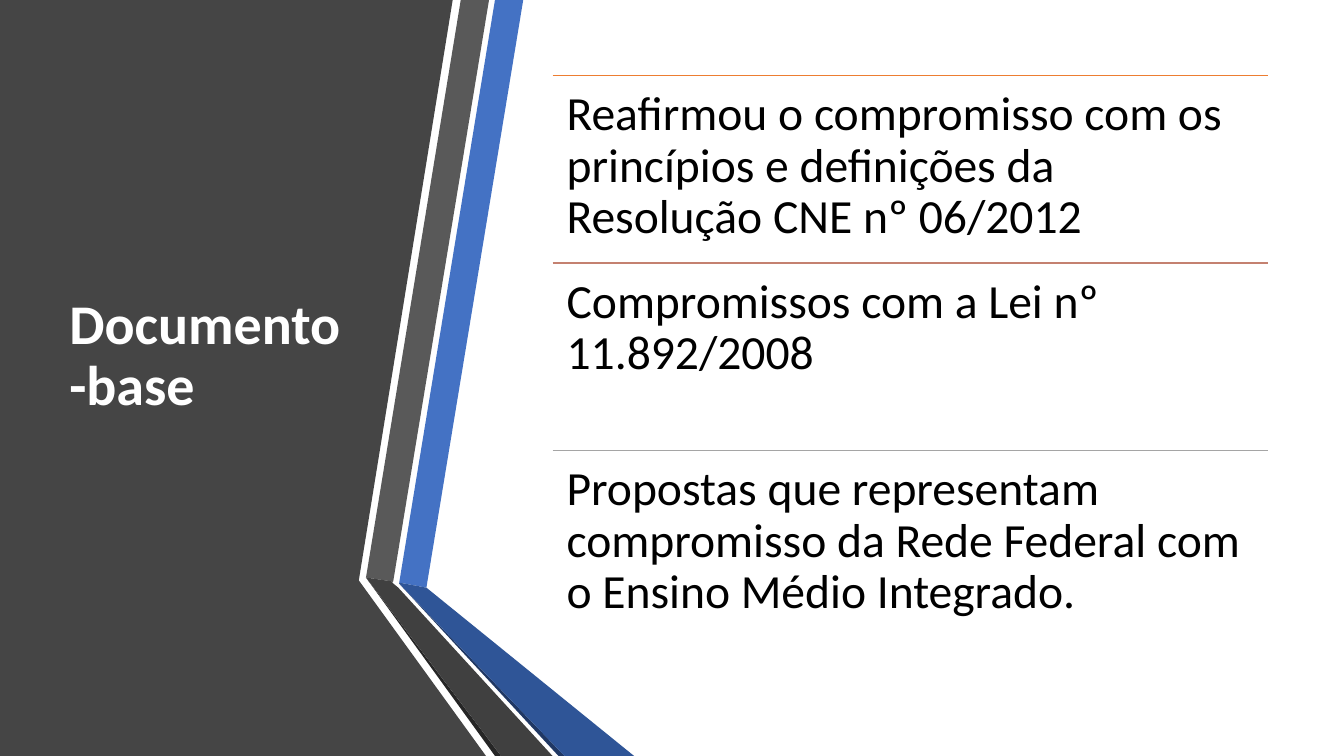
from pptx import Presentation
from pptx.dml.color import RGBColor
from pptx.enum.shapes import MSO_CONNECTOR
from pptx.enum.text import MSO_ANCHOR
from pptx.oxml.ns import qn
from pptx.util import Pt
from lxml import etree

STRAIGHT = MSO_CONNECTOR.STRAIGHT
TOP, MIDDLE = MSO_ANCHOR.TOP, MSO_ANCHOR.MIDDLE
PX = 9144  # EMU per px, 100 px to the inch

THEME = {
    "font": "Calibri",
    "title_size": 40, "point_size": 34,
    "title": "FFFFFF", "point": "000000",
    "panel": "454545",
    "blue": "4472C4", "blue_fold": "2F5597", "blue_edge": "203864",
    "grey": "595959", "grey_fold": "404040", "grey_edge": "262626",
    "rules": ["ED7D31", "C48170", "A5A5A5"],
}

prs = Presentation()
prs.slide_width, prs.slide_height = 1333 * PX, 750 * PX
slide = prs.slides.add_slide(prs.slide_layouts[6])
shapes = slide.shapes


def add_text(text, left, top, width, height, size, color, bold, anchor, insets):
    box = shapes.add_textbox(left * PX, top * PX, width * PX, height * PX)
    frame = box.text_frame
    frame.word_wrap = True
    frame.vertical_anchor = anchor
    frame.margin_left = frame.margin_right = insets[0] * PX
    frame.margin_top = frame.margin_bottom = insets[1] * PX
    frame.text = text
    paragraph = frame.paragraphs[0]
    paragraph.line_spacing = 0.9
    font = paragraph.runs[0].font
    font.name, font.size, font.bold = THEME["font"], Pt(size), bold
    font.color.rgb = RGBColor.from_string(color)


# Dark panel and folded ribbons, from back to front
ribbons = [
    ("panel", [(0, 0), (449, 0), (356, 575), (356, 576), (482, 750), (0, 750)]),
    ("blue", [(396, 578), (423, 583), (519, 0), (491, 0)]),
    ("grey", [(485, 0), (457, 0), (363, 573), (390, 577)]),
    ("grey_edge", [(363, 573), (491, 750), (497, 750)]),
    ("blue_edge", [(396, 579), (554, 750), (560, 750)]),
    ("blue_fold", [(396, 579), (560, 750), (629, 750), (423, 583), (396, 578)]),
    ("grey_fold", [(548, 750), (395, 583), (389, 578), (390, 577), (363, 573),
                   (497, 750)]),
]
for color_key, corners in ribbons:
    builder = shapes.build_freeform(*corners[0], scale=PX)
    builder.add_line_segments(corners[1:], close=True)
    ribbon = builder.convert_to_shape()
    ribbon.shadow.inherit = False
    ribbon.fill.solid()
    ribbon.fill.fore_color.rgb = RGBColor.from_string(THEME[color_key])
    ribbon.line.fill.background()

# Title
add_text("Documento-base", 59, 75, 304, 558, THEME["title_size"], THEME["title"],
         True, MIDDLE, (10, 5))

# Points, each under its own rule
POINT_LEFT, POINT_TOP, POINT_WIDTH, POINT_HEIGHT = 548, 75, 710, 186
points = [
    "Reafirmou o compromisso com os princípios e definições da Resolução CNE nº 06/2012",
    "Compromissos com a Lei nº 11.892/2008",
    "Propostas que representam compromisso da Rede Federal com o Ensino Médio Integrado.",
]
for index, (point, rule_color) in enumerate(zip(points, THEME["rules"])):
    top = POINT_TOP + index * POINT_HEIGHT
    rule = shapes.add_connector(STRAIGHT, POINT_LEFT * PX, top * PX,
                                (POINT_LEFT + POINT_WIDTH) * PX, top * PX)
    rule.line.color.rgb = RGBColor.from_string(rule_color)
    rule.line.width = Pt(1)
    etree.SubElement(rule._element.spPr, qn("a:effectLst"))
    add_text(point, POINT_LEFT, top, POINT_WIDTH, POINT_HEIGHT, THEME["point_size"],
             THEME["point"], False, TOP, (14, 14))

prs.save("out.pptx")
